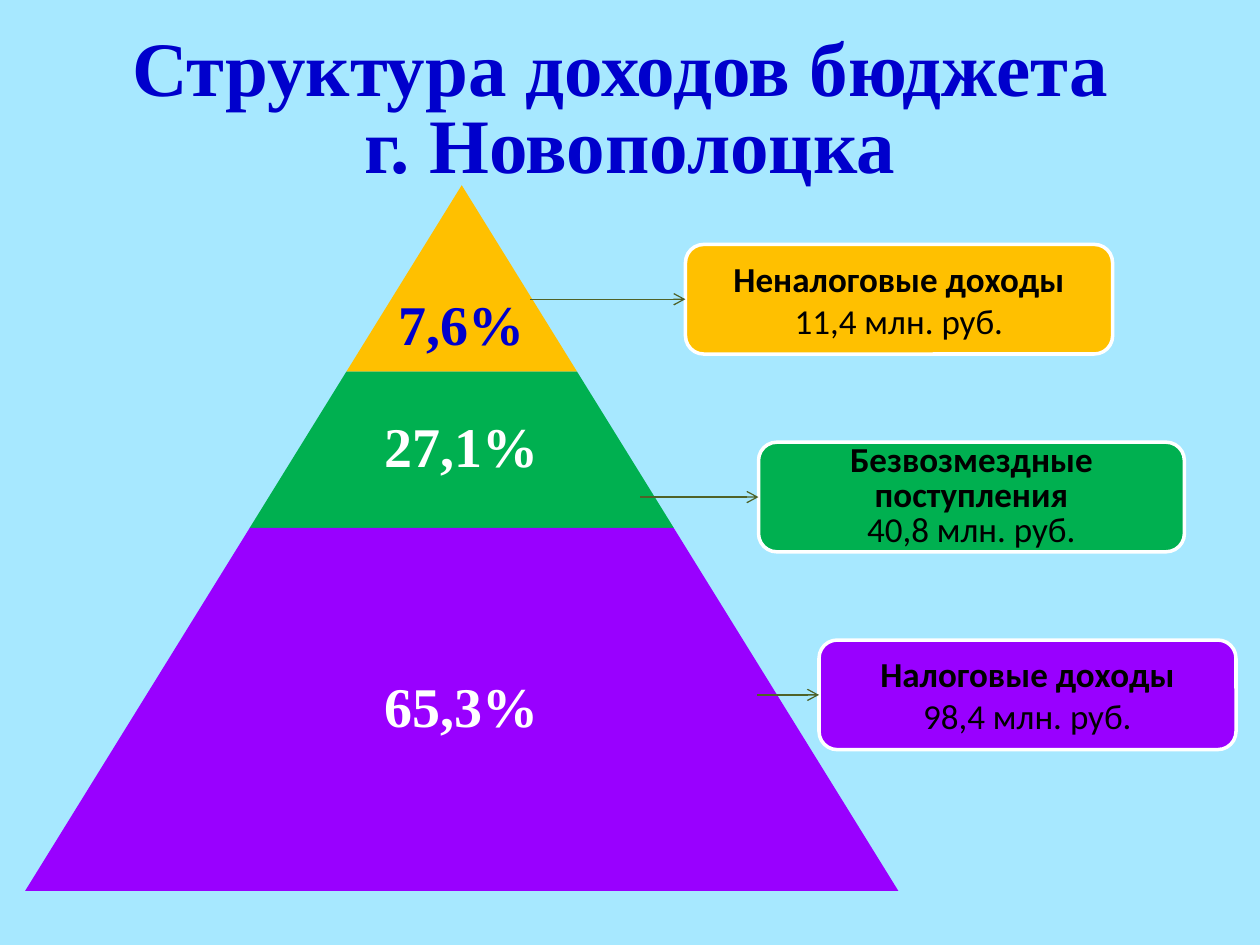
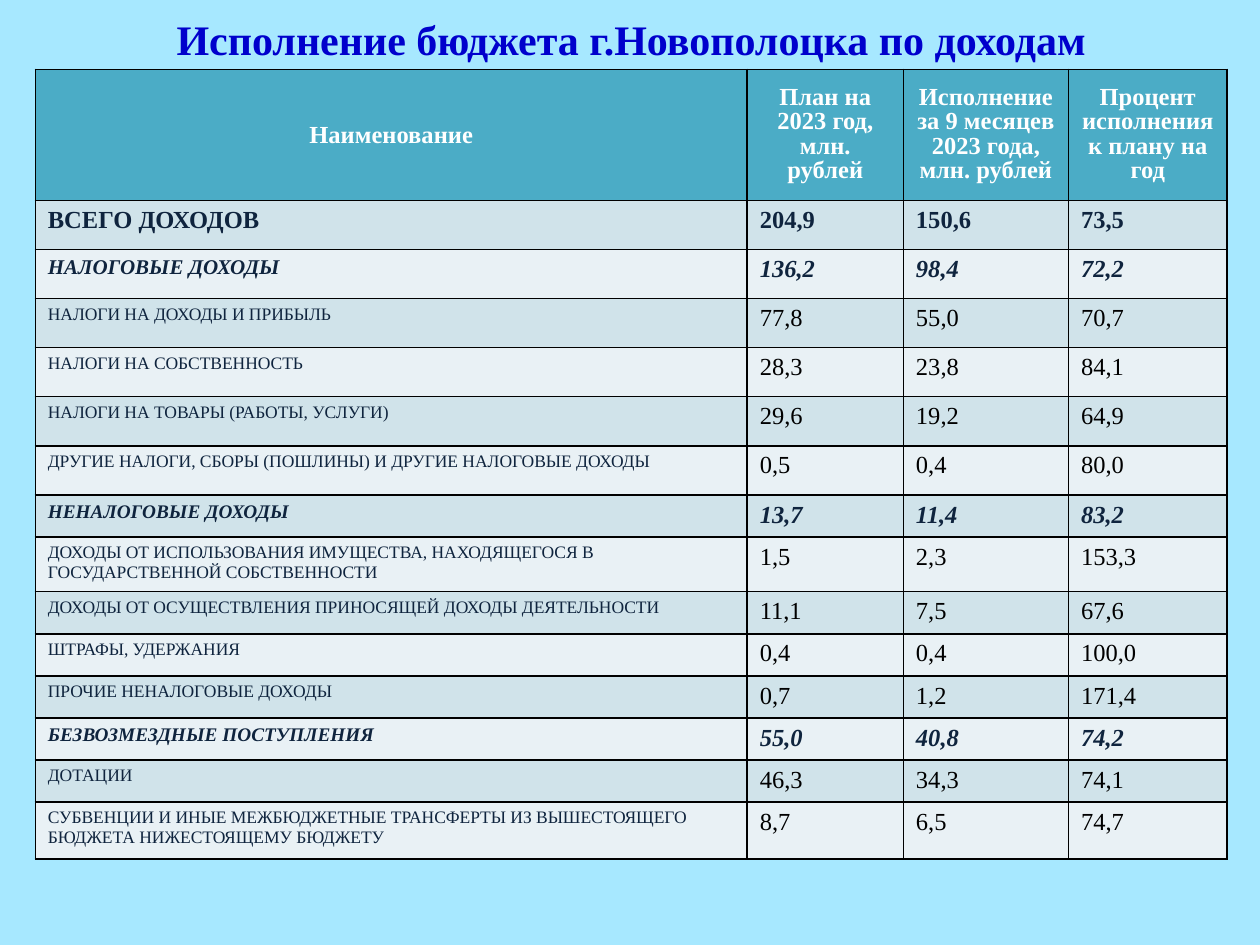
from lxml.etree import SubElement
from pptx import Presentation
from pptx.dml.color import RGBColor
from pptx.enum.shapes import MSO_CONNECTOR as CONN, MSO_SHAPE as SHAPE
from pptx.enum.text import MSO_ANCHOR as ANCHOR, PP_ALIGN as ALIGN
from pptx.oxml.ns import qn
from pptx.util import Inches, Pt

SKY = RGBColor(0xA7, 0xE8, 0xFF)
BLUE = RGBColor(0x00, 0x00, 0xCC)
AMBER = RGBColor(0xFF, 0xC0, 0x00)
GREEN = RGBColor(0x00, 0xB0, 0x50)
VIOLET = RGBColor(0x99, 0x00, 0xFF)
OLIVE = RGBColor(0x4F, 0x62, 0x28)
WHITE = RGBColor(0xFF, 0xFF, 0xFF)
BLACK = RGBColor(0x00, 0x00, 0x00)
NAVY = RGBColor(0x0F, 0x24, 0x3E)
TEAL = RGBColor(0x4B, 0xAC, 0xC6)
BANDS = [RGBColor(0xD0, 0xE3, 0xEA), RGBColor(0xE9, 0xF1, 0xF5)]
SERIF = "Times New Roman"
SANS = "Calibri"

LAYERS = [
    ("7,6%", 1.48, AMBER, BLUE),
    ("27,1%", 1.24, GREEN, WHITE),
    ("65,3%", 2.88, VIOLET, WHITE),
]
CALLOUTS = [
    ("Неналоговые доходы", "11,4 млн. руб.", AMBER, 5.44, 3.39, 4.21, None),
    ("Безвозмездные поступления", "40,8 млн. руб.", GREEN, 6.02, 3.38, 5.08, Pt(20)),
    ("Налоговые доходы", "98,4 млн. руб.", VIOLET, 6.5, 3.31, 6.01, None),
]
COLUMNS = [
    ("Наименование", 5.65),
    ("План на 2023 год, млн. рублей", 1.24),
    ("Исполнение за 9 месяцев 2023 года, млн. рублей", 1.31),
    ("Процент исполнения к плану на год", 1.26),
]
TOTAL = dict(size=Pt(14), bold=True, color=NAVY)
TAX_GROUP = dict(size=Pt(12), bold=True, italic=True, color=NAVY)
GROUP = dict(TAX_GROUP, size=Pt(11))
ITEM = dict(size=Pt(10), color=NAVY)
HEADER_HEIGHT = 1.04
ROWS = [
    (0.39, TOTAL, "ВСЕГО ДОХОДОВ", "204,9", "150,6", "73,5"),
    (0.39, TAX_GROUP, "НАЛОГОВЫЕ ДОХОДЫ", "136,2", "98,4", "72,2"),
    (0.39, ITEM, "НАЛОГИ НА ДОХОДЫ И ПРИБЫЛЬ", "77,8", "55,0", "70,7"),
    (0.39, ITEM, "НАЛОГИ НА СОБСТВЕННОСТЬ", "28,3", "23,8", "84,1"),
    (0.39, ITEM, "НАЛОГИ НА ТОВАРЫ (РАБОТЫ, УСЛУГИ)", "29,6", "19,2", "64,9"),
    (0.39, ITEM, "ДРУГИЕ НАЛОГИ, СБОРЫ (ПОШЛИНЫ) И ДРУГИЕ НАЛОГОВЫЕ ДОХОДЫ",
     "0,5", "0,4", "80,0"),
    (0.32, GROUP, "НЕНАЛОГОВЫЕ ДОХОДЫ", "13,7", "11,4", "83,2"),
    (0.42, ITEM, "ДОХОДЫ ОТ ИСПОЛЬЗОВАНИЯ ИМУЩЕСТВА, НАХОДЯЩЕГОСЯ В "
     "ГОСУДАРСТВЕННОЙ СОБСТВЕННОСТИ", "1,5", "2,3", "153,3"),
    (0.32, ITEM, "ДОХОДЫ ОТ ОСУЩЕСТВЛЕНИЯ ПРИНОСЯЩЕЙ ДОХОДЫ ДЕЯТЕЛЬНОСТИ",
     "11,1", "7,5", "67,6"),
    (0.32, ITEM, "ШТРАФЫ, УДЕРЖАНИЯ", "0,4", "0,4", "100,0"),
    (0.32, ITEM, "ПРОЧИЕ НЕНАЛОГОВЫЕ ДОХОДЫ", "0,7", "1,2", "171,4"),
    (0.32, GROUP, "БЕЗВОЗМЕЗДНЫЕ ПОСТУПЛЕНИЯ", "55,0", "40,8", "74,2"),
    (0.32, ITEM, "ДОТАЦИИ", "46,3", "34,3", "74,1"),
    (0.45, ITEM, "СУБВЕНЦИИ И ИНЫЕ МЕЖБЮДЖЕТНЫЕ ТРАНСФЕРТЫ ИЗ ВЫШЕСТОЯЩЕГО "
     "БЮДЖЕТА НИЖЕСТОЯЩЕМУ БЮДЖЕТУ", "8,7", "6,5", "74,7"),
]


def set_attrs(target, **values):
    for name, value in values.items():
        setattr(target, name, value)


def write(p, text, color, align=ALIGN.CENTER, spacing=None, **font):
    set_attrs(p, text=text, alignment=align, line_spacing=spacing)
    for r in p.runs:
        set_attrs(r.font, **font)
        r.font.color.rgb = color


def paint(sp, fill):
    sp.shadow.inherit = False
    sp.fill.solid()
    sp.fill.fore_color.rgb = fill


def new_slide(prs):
    s = prs.slides.add_slide(prs.slide_layouts[6])
    s.background.fill.solid()
    s.background.fill.fore_color.rgb = SKY
    return s


def add_title(s, text, size, left, top, width, height):
    box = map(Inches, (left, top, width, height))
    tf = s.shapes.add_textbox(*box).text_frame
    set_attrs(tf, word_wrap=True, vertical_anchor=ANCHOR.MIDDLE)
    write(tf.paragraphs[0], text, BLUE, spacing=Pt(44), name=SERIF,
          size=Pt(size), bold=True)


def add_pyramid(s, left, top, width, height):
    shapes = s.shapes.add_group_shape().shapes
    slope = width / height / 2
    depth = 0
    for share, layer, fill, color in LAYERS:
        y = top + depth
        depth += layer
        base = 2 * slope * depth
        box = [Inches(v) for v in (left + (width - base) / 2, y, base, layer)]
        sp = shapes.add_shape(SHAPE.TRAPEZOID, *box)
        sp.adjustments[0] = slope
        paint(sp, fill)
        sp.line.fill.background()
        tf = shapes.add_textbox(*box).text_frame
        at_apex = depth == layer
        set_attrs(tf, word_wrap=True, margin_top=Inches(0.04),
                  margin_bottom=Inches(0.11 if at_apex else 0.04),
                  vertical_anchor=ANCHOR.BOTTOM if at_apex else ANCHOR.MIDDLE)
        write(tf.paragraphs[0], share, color, spacing=0.9, name=SERIF,
              size=Pt(32), bold=True)


def add_arrow(s, x, y, target):
    line = s.shapes.add_connector(CONN.STRAIGHT, x, y, target.left, y)
    line.end_connect(target, 1)
    line.line.color.rgb = OLIVE
    line.line.width = Pt(0.75)
    SubElement(line.line._get_or_add_ln(), qn("a:tailEnd"), type="arrow")
    SubElement(line._element.spPr, qn("a:effectLst"))


def add_callouts(s, top, step, height):
    for i, (name, amount, fill, left, width, start, spacing) in enumerate(CALLOUTS):
        box = map(Inches, (left, top + i * step, width, height))
        sp = s.shapes.add_shape(SHAPE.ROUNDED_RECTANGLE, *box)
        paint(sp, fill)
        sp.line.color.rgb = WHITE
        sp.line.width = Pt(2)
        tf = sp.text_frame
        set_attrs(tf, word_wrap=True, vertical_anchor=ANCHOR.MIDDLE)
        for p, text, bold in ((tf.paragraphs[0], name, True),
                              (tf.add_paragraph(), amount, False)):
            write(p, text, BLACK, spacing=spacing, name=SANS, size=Pt(20), bold=bold)
        add_arrow(s, Inches(start), sp.top + sp.height // 2, sp)


def fill_cell(cell, fill):
    tc_pr = cell._tc.get_or_add_tcPr()
    for side in ("lnL", "lnR", "lnT", "lnB"):
        ln = SubElement(tc_pr, qn(f"a:{side}"), w=str(Pt(1)))
        solid = SubElement(ln, qn("a:solidFill"))
        SubElement(solid, qn("a:srgbClr"), val=str(BLACK))
    cell.fill.solid()
    cell.fill.fore_color.rgb = fill


def add_budget_table(s, left, top):
    heights = [HEADER_HEIGHT] + [row[0] for row in ROWS]
    widths = [width for _, width in COLUMNS]
    box = map(Inches, (left, top, sum(widths), sum(heights)))
    table = s.shapes.add_table(len(heights), len(widths), *box).table
    for row, height in zip(table.rows, heights):
        row.height = Inches(height)
    for c, (heading, width) in enumerate(COLUMNS):
        table.columns[c].width = Inches(width)
        cell = table.cell(0, c)
        fill_cell(cell, TEAL)
        cell.vertical_anchor = ANCHOR.MIDDLE
        write(cell.text_frame.paragraphs[0], heading, WHITE,
              spacing=Pt(14) if c else None, name=SERIF, size=Pt(14), bold=True)
    for i, (_, style, *texts) in enumerate(ROWS):
        for c, text in enumerate(texts):
            cell = table.cell(i + 1, c)
            fill_cell(cell, BANDS[i % 2])
            look = dict(bold=False, italic=False, name=SERIF) | style
            if c:
                look |= dict(size=Pt(14), color=BLACK if style is ITEM else NAVY)
            write(cell.text_frame.paragraphs[0], text, align=ALIGN.LEFT, **look)


def income_structure(prs):
    s = new_slide(prs)
    add_title(s, "Структура доходов бюджета \vг. Новополоцка", 44, 0.5, 0.3, 9, 1.17)
    add_pyramid(s, 0.2, 1.47, 6.93, 5.6)
    add_callouts(s, 1.94, 1.57, 0.87)


def income_execution(prs):
    s = new_slide(prs)
    add_title(s, "Исполнение бюджета г.Новополоцка по доходам", 24, 0.51, 0.04, 9, 0.32)
    add_budget_table(s, 0.28, 0.55)


def main():
    prs = Presentation()
    prs.slide_width, prs.slide_height = Inches(10), Inches(7.5)
    income_structure(prs)
    income_execution(prs)
    prs.save("out.pptx")


if __name__ == "__main__":
    main()
